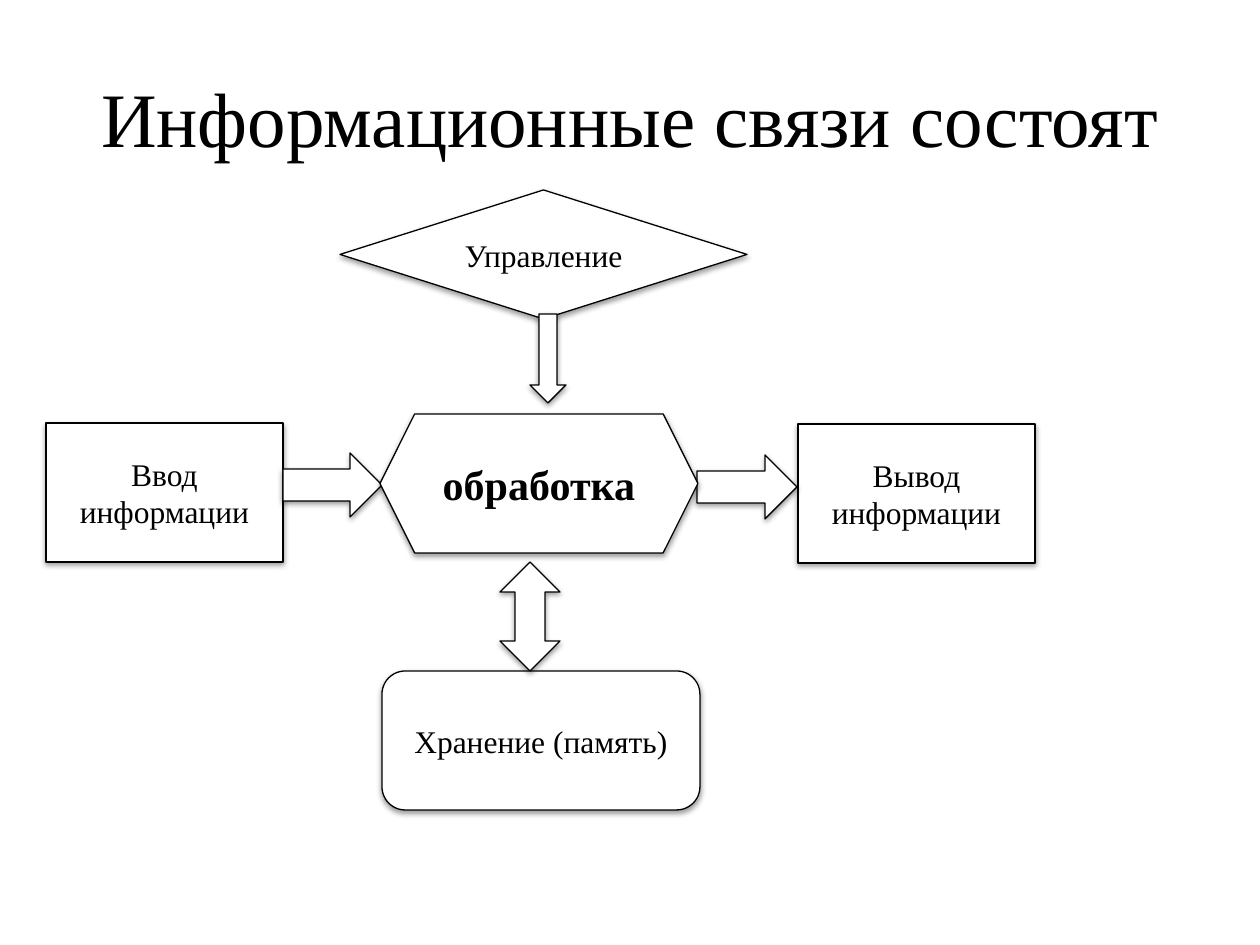
from lxml.etree import SubElement
from pptx import Presentation
from pptx.dml.color import RGBColor
from pptx.enum.shapes import MSO_SHAPE
from pptx.enum.text import MSO_ANCHOR, PP_ALIGN
from pptx.oxml.ns import qn
from pptx.util import Emu, Pt

FONT = "Times New Roman"
COLORS = {"ink": "000000", "paper": "FFFFFF"}
EMU_PER_PX = 914400 / 126

NODES = [
    (MSO_SHAPE.FLOWCHART_DECISION, (340, 190, 407, 129), "Управление", 18, False),
    (MSO_SHAPE.RECTANGLE, (46, 423, 237, 139), "Ввод информации", 18, False),
    (MSO_SHAPE.RECTANGLE, (798, 424, 237, 139), "Вывод информации", 18, False),
    (MSO_SHAPE.ROUNDED_RECTANGLE, (382, 671, 318, 139), "Хранение (память)", 18, False),
]
ARROWS = [
    (MSO_SHAPE.UP_DOWN_ARROW, (500, 562, 60, 109)),
    (MSO_SHAPE.DOWN_ARROW, (530, 314, 36, 89)),
    (MSO_SHAPE.RIGHT_ARROW, (283, 453, 99, 64)),
    (MSO_SHAPE.RIGHT_ARROW, (697, 455, 100, 64)),
]
PROCESSING = (MSO_SHAPE.HEXAGON, (380, 414, 318, 139), "обработка", 24, True)


def px(length):
    return Emu(round(length * EMU_PER_PX))


def color(name):
    return RGBColor.from_string(COLORS[name])


def write(box, text, size, bold=False):
    frame = box.text_frame
    frame.word_wrap = True
    frame.vertical_anchor = MSO_ANCHOR.MIDDLE
    para = frame.paragraphs[0]
    para.alignment = PP_ALIGN.CENTER
    span = para.add_run()
    span.text = text
    span.font.name = FONT
    span.font.size = Pt(size)
    span.font.bold = bold
    span.font.color.rgb = color("ink")


def add_shadow(shape):
    shape.shadow.inherit = False
    effects = shape._element.spPr.find(qn("a:effectLst"))
    shadow = SubElement(effects, qn("a:outerShdw"), blurRad="40000", dist="20000",
                        dir="5400000", rotWithShape="0")
    tint = SubElement(shadow, qn("a:srgbClr"), val=COLORS["ink"])
    SubElement(tint, qn("a:alpha"), val="38000")


def add_block(page, kind, place):
    shape = page.shapes.add_shape(kind, *map(px, place))
    shape.fill.solid()
    shape.fill.fore_color.rgb = color("paper")
    shape.line.color.rgb = color("ink")
    shape.line.width = Pt(0.75)
    add_shadow(shape)
    return shape


def add_node(page, kind, place, text, size, bold):
    write(add_block(page, kind, place), text, size, bold)


def add_title(page, text):
    box = page.shapes.add_textbox(*map(px, (63, 38, 1134, 157)))
    write(box, text, 44)


def main():
    deck = Presentation()
    deck.slide_width, deck.slide_height = px(1260), px(945)
    page = deck.slides.add_slide(deck.slide_layouts[6])
    add_title(page, "Информационные связи состоят")
    for node in NODES:
        add_node(page, *node)
    for kind, place in ARROWS:
        add_block(page, kind, place)
    add_node(page, *PROCESSING)
    deck.save("out.pptx")


if __name__ == "__main__":
    main()
